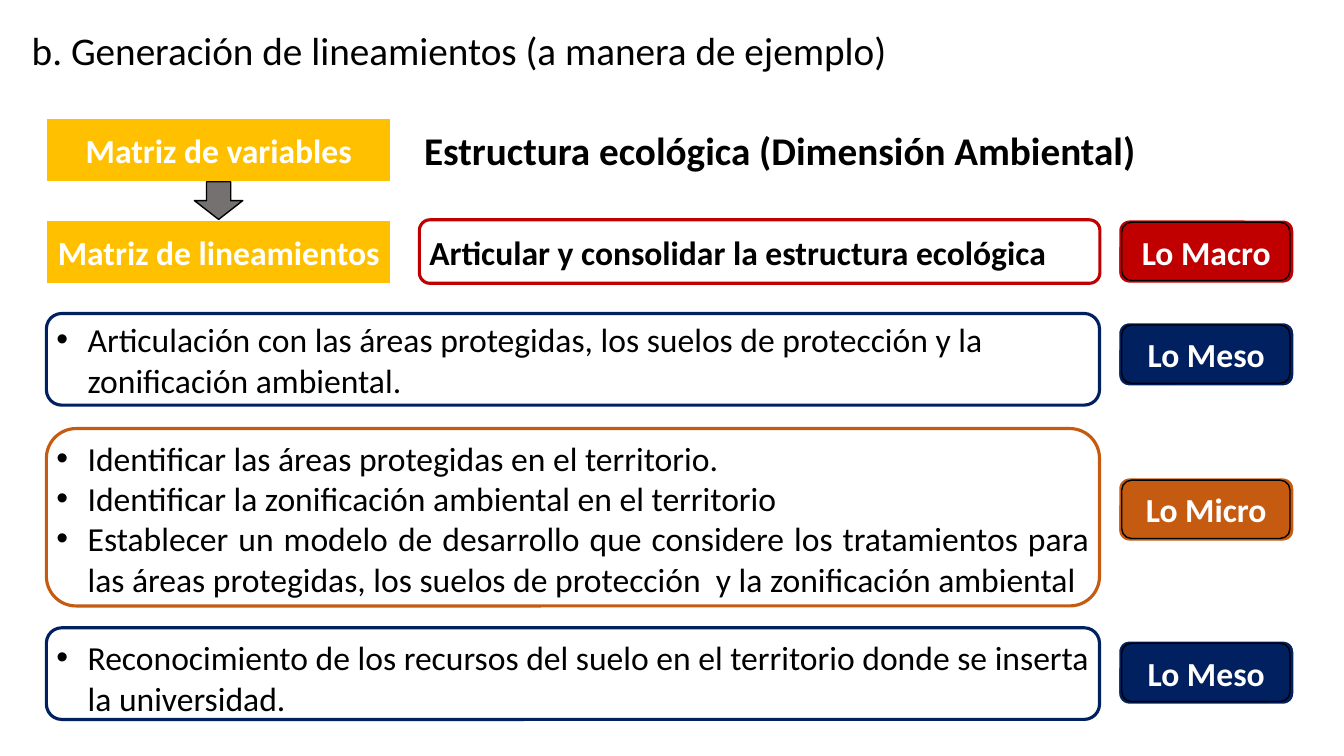
from lxml.etree import SubElement
from pptx import Presentation
from pptx.dml.color import RGBColor
from pptx.enum.shapes import MSO_SHAPE as Preset
from pptx.enum.text import MSO_ANCHOR as Anchor, MSO_AUTO_SIZE as AutoSize, PP_ALIGN as Align
from pptx.oxml.ns import qn
from pptx.util import Cm, Pt

COLORS = {
    "white": "FFFFFF", "black": "000000", "yellow": "FFC000", "gray": "767171",
    "macro": "C00000", "meso": "002060", "micro": "C55A11",
}
LEFT, BAR_HEIGHT = 1.17, 1.6

presentation = Presentation()
presentation.slide_width, presentation.slide_height = Cm(33.87), Cm(19.05)
slide = presentation.slides.add_slide(presentation.slide_layouts[5])


def add_box(preset, left, top, width, height, fill, line, line_width):
    shape = slide.shapes.add_shape(preset, Cm(left), Cm(top), Cm(width), Cm(height))
    shape.shadow.inherit = False
    if fill:
        shape.fill.solid()
        shape.fill.fore_color.rgb = RGBColor.from_string(COLORS[fill])
    else:
        shape.fill.background()
    shape.line.color.rgb = RGBColor.from_string(COLORS[line])
    shape.line.width = Pt(line_width)
    return shape


def write(shape, texts, size, color, bold, align, anchor, bullet=False):
    frame = shape.text_frame
    frame.word_wrap = True
    frame.auto_size = AutoSize.NONE
    frame.vertical_anchor = anchor
    for index, text in enumerate(texts):
        paragraph = frame.paragraphs[0] if index == 0 else frame.add_paragraph()
        paragraph.text = text
        paragraph.alignment = align
        if bullet:
            properties = paragraph._p.get_or_add_pPr()
            properties.set("marL", str(Cm(0.79)))
            properties.set("indent", str(-Cm(0.79)))
            SubElement(properties, qn("a:buFont")).set("typeface", "Arial")
            SubElement(properties, qn("a:buChar")).set("char", "•")
        font = paragraph.font
        font.name, font.size, font.bold = "Calibri", Pt(size), bold
        font.color.rgb = RGBColor.from_string(COLORS[color])


# Title
title = slide.shapes.title
title.left, title.top, title.width, title.height = Cm(0), Cm(0.48), Cm(33.87), Cm(1.45)
write(title, ["b. Generación de lineamientos (a manera de ejemplo)"],
      28, "black", False, Align.JUSTIFY, Anchor.MIDDLE)
title.text_frame.margin_left = Cm(0.8)
title.text_frame.paragraphs[0].line_spacing = 1.07

# Matrices and the arrow between them
for top, name in [(2.97, "Matriz de variables"), (5.54, "Matriz de lineamientos")]:
    matrix = add_box(Preset.RECTANGLE, LEFT, top, 8.69, BAR_HEIGHT, "yellow", "white", 1)
    write(matrix, [name], 24, "white", True, Align.CENTER, Anchor.MIDDLE)
    matrix.text_frame.margin_left = matrix.text_frame.margin_right = Cm(0.2)
add_box(Preset.DOWN_ARROW, 4.9, 4.58, 1.22, 0.95, "gray", "black", 1)

# Dimension heading
heading = slide.shapes.add_textbox(Cm(10.44), Cm(3.05), Cm(19.74), Cm(1.45))
write(heading, ["Estructura ecológica (Dimensión Ambiental)"],
      28, "black", True, Align.JUSTIFY, Anchor.TOP)

# Guidelines: level, frame left, top, width, height, text top, tag top, align, texts
guidelines = [
    ("Macro", 10.57, 5.54, 17.15, 1.6, 5.72, 5.54, Align.JUSTIFY,
     ["Articular y consolidar la estructura ecológica"]),
    ("Meso", LEFT, 7.9, 26.54, 2.31, 7.92, 8.13, Align.LEFT,
     ["Articulación con las áreas protegidas, los suelos de protección y la "
      "zonificación ambiental."]),
    ("Micro", LEFT, 10.8, 26.54, 4.47, 10.9, 12.04, Align.JUSTIFY,
     ["Identificar las áreas protegidas en el territorio.",
      "Identificar la zonificación ambiental en el territorio",
      "Establecer un modelo de desarrollo que considere los tratamientos para "
      "las áreas protegidas, los suelos de protección  y la zonificación ambiental"]),
    ("Meso", LEFT, 15.82, 26.54, 2.31, 15.93, 16.15, Align.LEFT,
     ["Reconocimiento de los recursos del suelo en el territorio donde se inserta "
      "la universidad."]),
]
for level, left, top, width, height, text_top, tag_top, align, texts in guidelines:
    color = level.lower()
    is_macro = level == "Macro"

    text_box = slide.shapes.add_textbox(Cm(left), Cm(text_top), Cm(width), Cm(height))
    write(text_box, texts, 24, "black", is_macro, align, Anchor.TOP, bullet=not is_macro)
    add_box(Preset.ROUNDED_RECTANGLE, left, top, width, height, None, color, 2.25)

    # Level tag with its inner outline
    tag = add_box(Preset.ROUNDED_RECTANGLE, 28.19, tag_top, 4.42, BAR_HEIGHT, color, "white", 1)
    write(tag, [f"Lo {level}"], 24, "white", True, Align.CENTER, Anchor.MIDDLE)
    add_box(Preset.ROUNDED_RECTANGLE, 28.27, tag_top + 0.06, 4.24, 1.47, None, "black", 1)

presentation.save("out.pptx")
